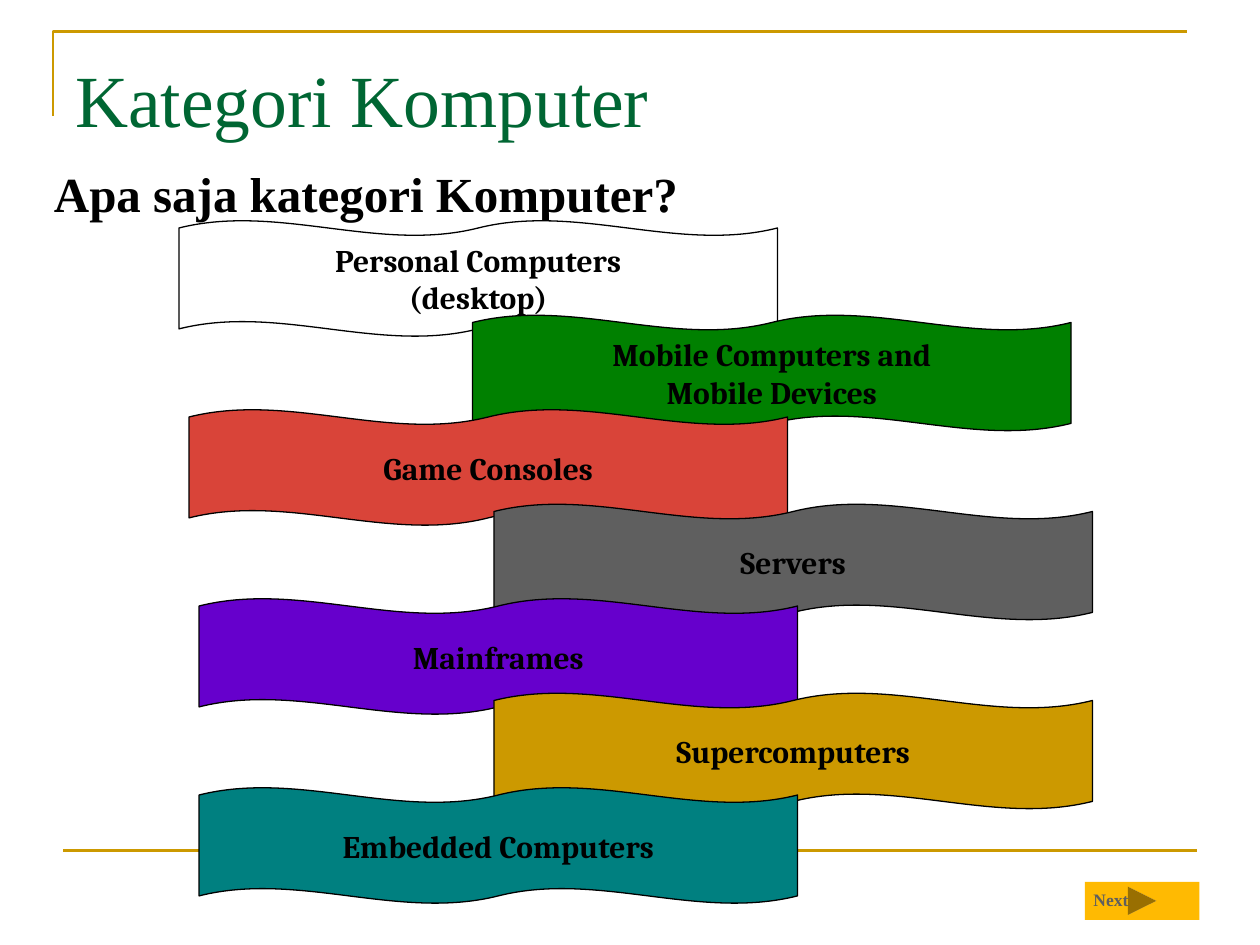
from lxml import etree
from pptx import Presentation
from pptx.dml.color import RGBColor
from pptx.enum.shapes import MSO_CONNECTOR, MSO_SHAPE
from pptx.enum.text import MSO_ANCHOR, PP_ALIGN
from pptx.oxml.ns import qn
from pptx.util import Inches, Pt

WAVE = MSO_SHAPE.DOUBLE_WAVE
NEXT_BUTTON = MSO_SHAPE.ACTION_BUTTON_FORWARD_OR_NEXT
STRAIGHT = MSO_CONNECTOR.STRAIGHT
TOP, MIDDLE = MSO_ANCHOR.TOP, MSO_ANCHOR.MIDDLE
LEFT, CENTER = PP_ALIGN.LEFT, PP_ALIGN.CENTER

SERIF, BANNER_FONT = "Times New Roman", "Cambria"
COLORS = {
    "black": "000000",
    "white": "FFFFFF",
    "title": "006633",
    "gold": "CC9900",
    "button": "FFBA02",
    "gray": "5F5F5F",
    "green": "008000",
    "red": "D94439",
    "purple": "6600CC",
    "teal": "008080",
}
# left edge, fill, lines of text
BANNERS = [
    (1.42, "white", ["Personal Computers", "(desktop)"]),
    (3.75, "green", ["Mobile Computers and", "Mobile Devices"]),
    (1.5, "red", ["Game Consoles"]),
    (3.92, "gray", ["Servers"]),
    (1.58, "purple", ["Mainframes"]),
    (3.92, "gold", ["Supercomputers"]),
    (1.58, "teal", ["Embedded Computers"]),
]


def rgb(name):
    return RGBColor.from_string(COLORS[name])


def inches(*values):
    return [Inches(v) for v in values]


def write(sp, lines, font, size, color, bold=False, align=LEFT, anchor=TOP, wrap=False):
    tf = sp.text_frame
    tf.word_wrap = wrap
    tf.vertical_anchor = anchor
    p = tf.paragraphs[0]
    p.alignment = align
    for i, line in enumerate(lines):
        if i:
            p.add_line_break()
        r = p.add_run()
        r.text = line
        r.font.name = font
        r.font.size = Pt(size)
        r.font.bold = bold
        r.font.color.rgb = rgb(color)


def add_text(s, box, text, size, color, **style):
    sp = s.shapes.add_textbox(*inches(*box))
    write(sp, [text], SERIF, size, color, **style)


def add_frame(s, x, y, w, h):
    """Corner rule at the top left and a footer rule."""
    corner = s.shapes.build_freeform(*inches(x, y + h), scale=1.0)
    corner.add_line_segments([inches(x, y), inches(x + w, y)], close=False)
    sp = corner.convert_to_shape()
    sp.shadow.inherit = False
    sp.fill.background()
    footer = s.shapes.add_connector(STRAIGHT, *inches(0.5, 6.75, 9.5, 6.75))
    etree.SubElement(footer._element.spPr, qn("a:effectLst"))
    for rule in (sp, footer):
        rule.line.color.rgb = rgb("gold")
        rule.line.width = Pt(1.5)


def add_next_button(s, x, y, w, h):
    sp = s.shapes.add_shape(NEXT_BUTTON, *inches(x, y, w, h))
    sp.shadow.inherit = False
    sp.fill.solid()
    sp.fill.fore_color.rgb = rgb("button")
    sp.line.fill.background()
    add_text(s, (x - 0.03, y + 0.01, 0.51, 0.27), "Next", 10, "gray", bold=True)


def add_banner(s, x, y, w, h, fill, lines):
    sp = s.shapes.add_shape(WAVE, *inches(x, y, w, h))
    sp.adjustments[0] = 0.065
    sp.adjustments[1] = 0
    sp.shadow.inherit = False
    sp.fill.solid()
    sp.fill.fore_color.rgb = rgb(fill)
    sp.line.color.rgb = rgb("black")
    sp.line.width = Pt(0.75)
    write(sp, lines, BANNER_FONT, 18, "black", bold=True, align=CENTER, anchor=MIDDLE)


def add_banners(s, top, step, w, h):
    for i, (x, fill, lines) in enumerate(BANNERS):
        add_banner(s, x, top + i * step, w, h, fill, lines)


def main():
    prs = Presentation()
    prs.slide_width, prs.slide_height = inches(10, 7.5)
    s = prs.slides.add_slide(prs.slide_layouts[6])
    add_frame(s, 0.42, 0.25, 9, 0.67)
    add_text(s, (0.5, 0.38, 9, 1.17), "Kategori Komputer", 42, "title", wrap=True)
    add_next_button(s, 8.61, 7, 0.91, 0.3)
    add_text(s, (0.33, 1.25, 5.16, 0.6), "Apa saja kategori Komputer?", 28, "black", bold=True)
    add_banners(s, top=1.75, step=0.75, w=4.75, h=0.92)
    prs.save("out.pptx")


if __name__ == "__main__":
    main()
